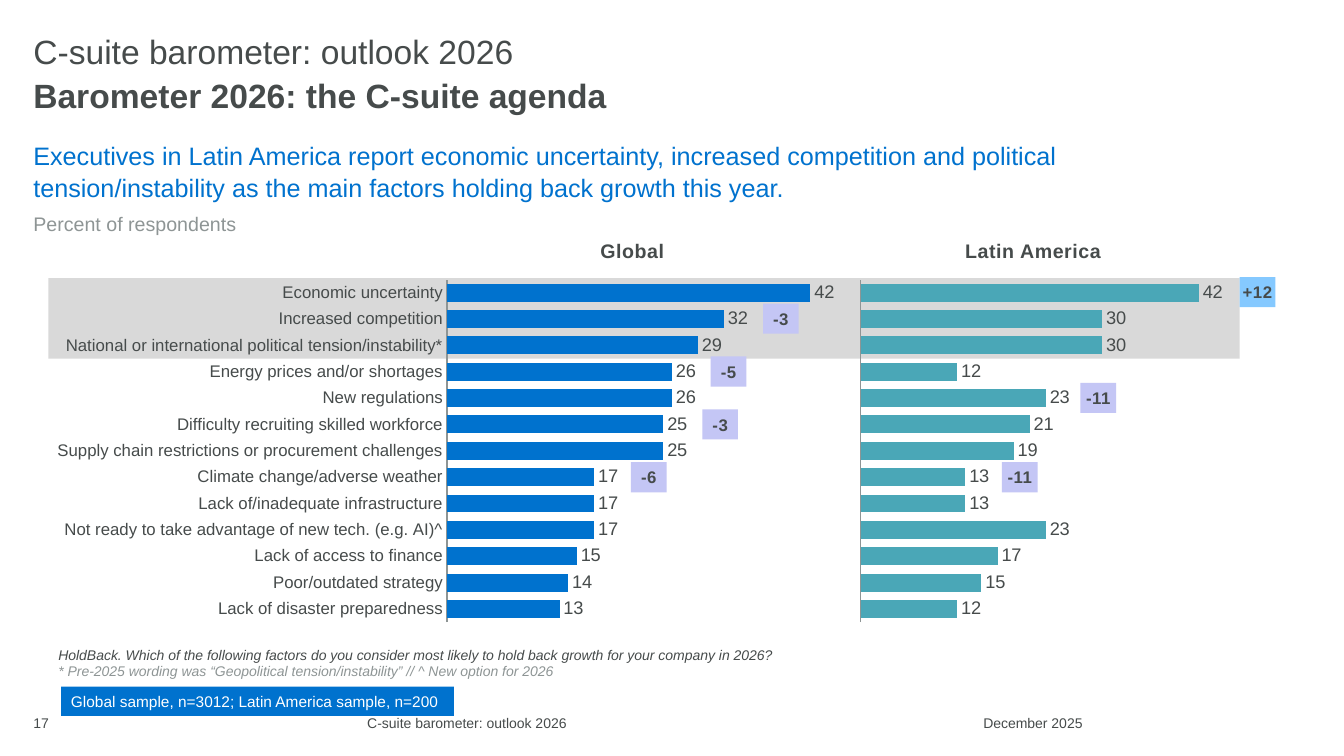
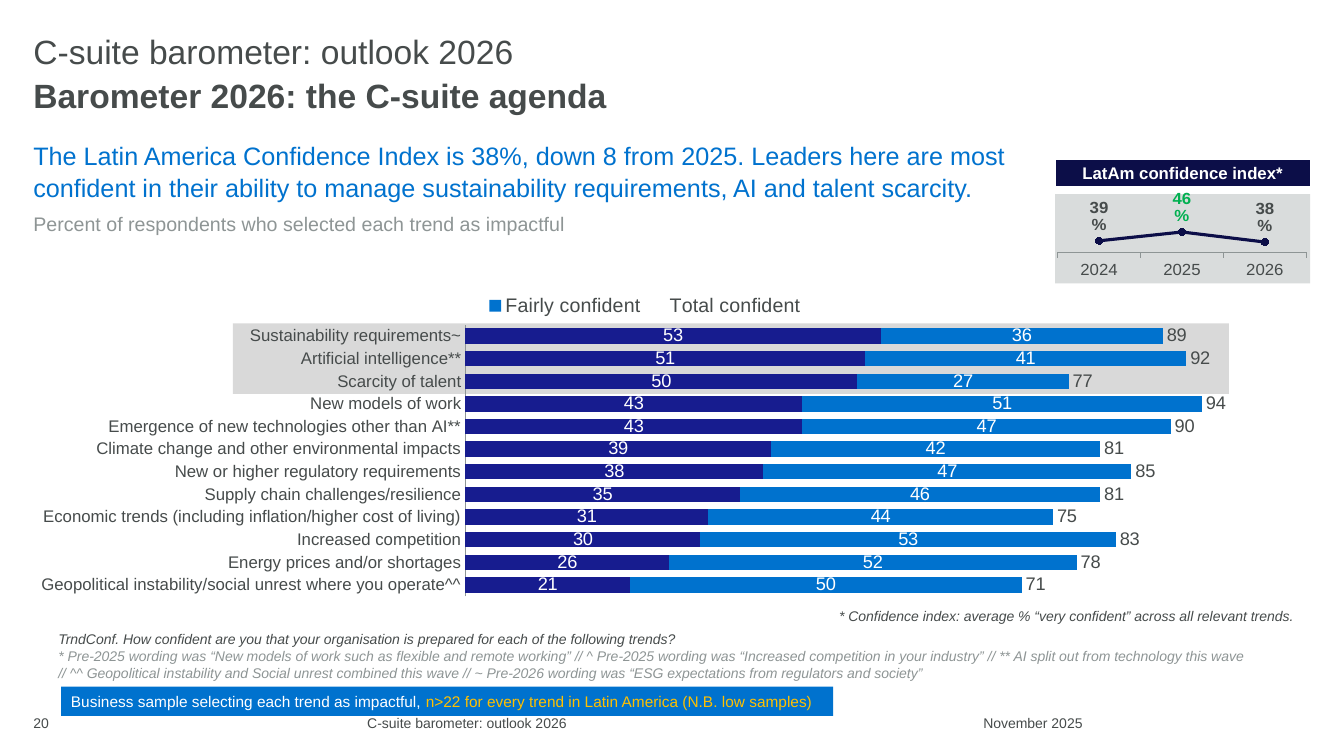
"""Build two survey slides with bar charts, change badges and a confidence index."""
from lxml import etree
from pptx import Presentation
from pptx.chart.data import CategoryChartData
from pptx.dml.color import RGBColor
from pptx.enum import chart as charts, shapes, text
from pptx.oxml import ns
from pptx.util import Cm, Pt

FONT = "Arial"
COLORS = {
    "text": "464B4B", "muted": "8E9595", "blue": "0072CE", "navy": "171C8F",
    "midnight": "0C0E48", "teal": "4AA7B7", "band": "D9D9D9", "panel": "D9DCDC",
    "down": "C4C6F5", "up": "85C9FF", "white": "FFFFFF", "amber": "FFC000", "green": "00B050",
}
TITLE = "C-suite barometer: outlook 2026"
SUBTITLE = "Barometer 2026: the C-suite agenda"
LEFT = 0.84
FOOTER_TOP = 17.83
FOOTER_HEIGHT = 0.76
CHART_TOP = 7.03
CHART_HEIGHT = 8.66
BADGE_WIDTH = 0.9
BADGE_HEIGHT = 0.76
FLAT = (0, 0.13, 0, 0.13)
HEADING = (0, 0.13, 0.25, 0.13)
PADDED = (0.25, 0.13, 0.25, 0.13)
CENTER = text.PP_ALIGN.CENTER
RIGHT = text.PP_ALIGN.RIGHT
MIDDLE = text.MSO_ANCHOR.MIDDLE
TOP = text.MSO_ANCHOR.TOP
LABELS = charts.XL_LABEL_POSITION


def color(name):
    return RGBColor.from_string(COLORS[name])


def add_node(parent, tag, **attributes):
    return etree.SubElement(parent, ns.qn(tag), **attributes)


def shape_properties(fill=None):
    properties = etree.Element(ns.qn("c:spPr"))
    if fill:
        add_node(add_node(properties, "a:solidFill"), "a:srgbClr", val=COLORS[fill])
    else:
        add_node(properties, "a:noFill")
    add_node(add_node(properties, "a:ln"), "a:noFill")
    return properties


class Deck:
    """Hold the shared style and the slide being built."""

    def __init__(self):
        self.presentation = Presentation()
        self.presentation.slide_width = Cm(33.87)
        self.presentation.slide_height = Cm(19.05)
        self.slide = None

    def set_font(self, font, size, name="text", bold=False, italic=False):
        font.name, font.size, font.bold, font.italic = FONT, Pt(size), bold, italic
        font.color.rgb = color(name)

    def set_text(self, frame, lines, size=10, name="text", bold=False, italic=False, align=None,
                 anchor=TOP, margins=PADDED, spacing=None, after=None, tracking=None):
        frame.word_wrap = True
        frame.auto_size = text.MSO_AUTO_SIZE.NONE
        frame.vertical_anchor = anchor
        (frame.margin_left, frame.margin_top,
         frame.margin_right, frame.margin_bottom) = map(Cm, margins)
        for index, line in enumerate(lines):
            content, line_color, line_size = line if isinstance(line, tuple) else (line, name, size)
            paragraph = frame.add_paragraph() if index else frame.paragraphs[0]
            paragraph.alignment = align or text.PP_ALIGN.LEFT
            if spacing:
                paragraph.line_spacing = spacing
            if after:
                paragraph.space_after = Pt(after)
            self.set_font(paragraph.font, line_size, line_color, bold, italic)
            if tracking:
                paragraph._p.pPr.find(ns.qn("a:defRPr")).set("spc", str(tracking))
            if isinstance(content, str):
                paragraph.add_run().text = content
                continue
            for run_text, run_color in content:
                run = paragraph.add_run()
                run.text = run_text
                run.font.color.rgb = color(run_color)

    def add_text(self, at, lines, **style):
        shape = self.slide.shapes.add_textbox(*map(Cm, at))
        self.set_text(shape.text_frame, lines, **style)

    def add_box(self, at, fill, lines=(), **style):
        shape = self.slide.shapes.add_shape(shapes.MSO_SHAPE.RECTANGLE, *map(Cm, at))
        shape.shadow.inherit = False
        shape.fill.solid()
        shape.fill.fore_color.rgb = color(fill)
        shape.line.fill.background()
        if lines:
            self.set_text(shape.text_frame, lines, anchor=MIDDLE, **style)

    def add_slide(self, number, date, message, measure):
        self.slide = self.presentation.slides.add_slide(self.presentation.slide_layouts[5])
        title = self.slide.shapes.title
        title.left, title.top, title.width, title.height = map(Cm, (LEFT, 0.84, 15.7, 1))
        flush = {"margins": (0, 0, 0, 0)}
        self.set_text(title.text_frame, [TITLE], size=24, anchor=MIDDLE, spacing=0.9, **flush)
        self.add_text((LEFT, 1.88, 15.7, 1), [SUBTITLE], size=24, bold=True, anchor=MIDDLE,
                      spacing=1.05, **flush)
        width = 30.56 if number == 17 else 25.55
        self.add_text((LEFT, 3.51, width, 2.51), [(message, "blue", 18), (measure, "muted", 14)],
                      spacing=1.05, after=6, **flush)
        for left, width, words, align in ((LEFT, 2.49, str(number), None),
                                          (3.33, 16.87, TITLE, CENTER),
                                          (23.77, 3.51, date, RIGHT)):
            self.add_text((left, FOOTER_TOP, width, FOOTER_HEIGHT), [words], align=align,
                          anchor=MIDDLE, margins=FLAT)

    def add_notes(self, top, height, question, remarks):
        lines = [question] + [(remark, "muted", 10) for remark in remarks]
        self.add_text((1.22, top, 30.86, height), lines, italic=True)

    def add_sample(self, width, runs):
        self.add_box((1.54, 17.3, width, 0.74), "blue", [runs], size=11, name="white")

    def add_badge(self, left, row, row_height, words):
        top = CHART_TOP + (row + 0.5) * row_height - BADGE_HEIGHT / 2
        fill = "up" if words.startswith("+") else "down"
        self.add_box((left, top, BADGE_WIDTH, BADGE_HEIGHT), fill, [words], size=12, bold=True,
                     align=CENTER, margins=FLAT, tracking=40)

    def add_chart(self, kind, at, categories, series, scale, plot, number_format="General",
                  fill=None):
        data = CategoryChartData(number_format=number_format)
        data.categories = categories
        for name, values in series:
            data.add_series(name, values)
        chart = self.slide.shapes.add_chart(kind, *map(Cm, at), data).chart
        chart.has_title = chart.has_legend = False
        self.set_font(chart.font, 12)
        chart.plots[0].vary_by_categories = False
        value_axis, category_axis = chart.value_axis, chart.category_axis
        value_axis.minimum_scale, value_axis.maximum_scale, value_axis.major_unit = scale
        value_axis.has_major_gridlines = False
        value_axis.visible = False
        category_axis.has_major_gridlines = False
        category_axis.major_tick_mark = charts.XL_TICK_MARK.NONE
        category_axis.minor_tick_mark = charts.XL_TICK_MARK.NONE
        category_axis.format.line.color.rgb = color("muted")
        category_axis.format.line.width = Pt(0.75)
        self.set_font(category_axis.tick_labels.font, 12)
        self.place_plot(chart, plot)
        chart._chartSpace.find(ns.qn("c:chart")).addnext(shape_properties(fill))
        return chart

    def place_plot(self, chart, plot):
        area = chart._chartSpace.find(".//" + ns.qn("c:plotArea"))
        for layout in area.findall(ns.qn("c:layout")):
            area.remove(layout)
        layout = etree.Element(ns.qn("c:layout"))
        manual = add_node(layout, "c:manualLayout")
        settings = [("layoutTarget", "inner"), ("xMode", "edge"), ("yMode", "edge")]
        settings += zip("xywh", map(str, plot))
        for tag, value in settings:
            add_node(manual, "c:" + tag, val=value)
        area.insert(0, layout)
        area.append(shape_properties())

    def label(self, series, size, name, position=None, bold=False, number_format=None):
        labels = series.data_labels
        labels.show_value = True
        self.set_font(labels.font, size, name, bold)
        if position is not None:
            labels.position = position
        if number_format:
            labels.number_format = number_format
            labels.number_format_is_linked = False

    def add_bars(self, at, categories, series, top, plot, stacked=False):
        kinds = charts.XL_CHART_TYPE
        chart = self.add_chart(kinds.BAR_STACKED if stacked else kinds.BAR_CLUSTERED, at,
                               categories, [item[:2] for item in series], (0, top, 5), plot)
        chart.category_axis.reverse_order = True
        chart.plots[0].gap_width = 47
        if stacked:
            chart.plots[0].overlap = 100
        for bars, (_, _, fill, label_color, position) in zip(chart.plots[0].series, series):
            if fill:
                bars.format.fill.solid()
                bars.format.fill.fore_color.rgb = color(fill)
            else:
                bars.format.fill.background()
            self.label(bars, 13, label_color, position)
        return chart

    def add_legend(self, chart, hidden):
        chart.has_legend = True
        legend = chart.legend
        legend.position = charts.XL_LEGEND_POSITION.TOP
        legend.include_in_layout = False
        self.set_font(legend.font, 14)
        entry = etree.Element(ns.qn("c:legendEntry"))
        add_node(entry, "c:idx", val=str(hidden))
        add_node(entry, "c:delete", val="1")
        legend._element.find(ns.qn("c:legendPos")).addnext(entry)

    def add_index(self, heading, years, values):
        table = self.slide.shapes.add_table(1, 1, *map(Cm, (26.59, 4.01, 6.43, 0.69))).table
        table.first_row = table.horz_banding = False
        cell = table.cell(0, 0)
        cell.fill.solid()
        cell.fill.fore_color.rgb = color("midnight")
        cell.vertical_anchor = MIDDLE
        paragraph = cell.text_frame.paragraphs[0]
        paragraph.alignment = CENTER
        self.set_font(paragraph.font, 12, "white", True)
        paragraph.add_run().text = heading
        properties = cell._tc.get_or_add_tcPr()
        for index, (side, width) in enumerate((("L", 1), ("R", 1), ("T", 1), ("B", 3))):
            border = etree.Element(ns.qn("a:ln" + side), w=str(Pt(width)))
            add_node(add_node(border, "a:solidFill"), "a:srgbClr", val=COLORS["white"])
            properties.insert(index, border)
        chart = self.add_chart(charts.XL_CHART_TYPE.LINE_MARKERS, (26.59, 4.8, 6.43, 2.34), years,
                               [("Confidence index", values)], (0.3, 0.65, 0.1),
                               (0.01, 0.159, 0.975, 0.492), "0%", "panel")
        chart.category_axis.major_tick_mark = charts.XL_TICK_MARK.OUTSIDE
        line = chart.plots[0].series[0]
        line.smooth = False
        line.format.line.color.rgb = color("midnight")
        line.format.line.width = Pt(2.25)
        line.marker.style = charts.XL_MARKER_STYLE.CIRCLE
        line.marker.size = 5
        line.marker.format.fill.solid()
        line.marker.format.fill.fore_color.rgb = color("midnight")
        line.marker.format.line.color.rgb = color("midnight")
        self.label(line, 12, "text", LABELS.ABOVE, True, "0%")
        peak = line.points[values.index(max(values))].data_label
        self.set_font(peak.font, 12, "green", True)
        peak.position = LABELS.ABOVE


def build_growth_slide(deck):
    deck.add_slide(17, "December 2025", "Executives in Latin America report economic uncertainty, increased competition and political tension/instability as the main factors holding back growth this year.", "Percent of respondents")
    factors = ["Economic uncertainty", "Increased competition",
               "National or international political tension/instability*",
               "Energy prices and/or shortages", "New regulations",
               "Difficulty recruiting skilled workforce",
               "Supply chain restrictions or procurement challenges",
               "Climate change/adverse weather", "Lack of/inadequate infrastructure",
               "Not ready to take advantage of new tech. (e.g. AI)^", "Lack of access to finance",
               "Poor/outdated strategy", "Lack of disaster preparedness"]
    world = [42, 32, 29, 26, 26, 25, 25, 17, 17, 17, 15, 14, 13]
    region = [42, 30, 30, 12, 23, 21, 19, 13, 13, 23, 17, 15, 12]
    deck.add_box((1.22, 7.01, 30.02, 2.03), "band")
    deck.add_bars((-0.69, CHART_TOP, 22.1, CHART_HEIGHT), factors,
                  [("Global", world, "blue", "text", LABELS.OUTSIDE_END)], 46,
                  (0.541, 0, 0.454, 1))
    chart = deck.add_bars((21.41, CHART_TOP, 11.61, CHART_HEIGHT), factors,
                          [("Latin America", region, "teal", "text", LABELS.OUTSIDE_END)], 54,
                          (0.024, 0, 0.944, 1))
    chart.category_axis.tick_label_position = charts.XL_TICK_LABEL_POSITION.NONE
    for left, width, words in ((14.61, 2.9, "Global"), (24.28, 3.76, "Latin America")):
        deck.add_text((left, 5.89, width, 0.86), [words], size=14, bold=True, align=CENTER,
                      margins=HEADING, tracking=40)
    for left, row, change in ((19.23, 1, "-3"), (17.91, 3, "-5"), (17.7, 5, "-3"),
                              (15.9, 7, "-6"), (27.23, 4, "-11"), (31.24, 0, "+12"),
                              (25.25, 7, "-11")):
        deck.add_badge(left, row, CHART_HEIGHT / len(factors), change)
    deck.add_notes(16.15, 1.12, "HoldBack. Which of the following factors do you consider most likely to hold back growth for your company in 2026?", ["* Pre-2025 wording was “Geopolitical tension/instability” // ^ New option for 2026"])
    deck.add_sample(9.9, "Global sample, n=3012; Latin America sample, n=200")


def build_confidence_slide(deck):
    deck.add_slide(20, "November 2025", "The Latin America Confidence Index is 38%, down 8 from 2025. Leaders here are most confident in their ability to manage sustainability requirements, AI and talent scarcity.", "Percent of respondents who selected each trend as impactful")
    trends = ["Sustainability requirements~", "Artificial intelligence**", "Scarcity of talent",
              "New models of work", "Emergence of new technologies other than AI**",
              "Climate change and other environmental impacts",
              "New or higher regulatory requirements", "Supply chain challenges/resilience",
              "Economic trends (including inflation/higher cost of living)",
              "Increased competition", "Energy prices and/or shortages",
              "Geopolitical instability/social unrest where you operate^^"]
    very = [53, 51, 50, 43, 43, 39, 38, 35, 31, 30, 26, 21]
    fairly = [36, 41, 27, 51, 47, 42, 47, 46, 44, 53, 52, 50]
    total = [sum(pair) for pair in zip(very, fairly)]
    deck.add_box((5.87, 8.15, 25.1, 1.78), "band")
    chart = deck.add_bars((0.43, 7.14, 31.65, 7.9), trends,
                          [("Very confident", very, "navy", "white", None),
                           ("Fairly confident", fairly, "blue", "white", None),
                           ("Total confident", total, None, "text", LABELS.INSIDE_BASE)], 100,
                          (0.357, 0.132, 0.624, 0.868), stacked=True)
    deck.add_legend(chart, hidden=2)
    deck.add_index("LatAm confidence index*", ["2024", "2025", "2026"], [0.39, 0.46, 0.38])
    deck.add_text((17.88, 15.19, 14.96, 0.69), ["* Confidence index: average % “very confident” across all relevant trends."], italic=True, align=RIGHT)
    deck.add_notes(15.77, 1.55, "TrndConf. How confident are you that your organisation is prepared for each of the following trends?", ["* Pre-2025 wording was “New models of work such as flexible and remote working” // ^ Pre-2025 wording was “Increased competition in your industry” // ** AI split out from technology this wave", "// ^^ Geopolitical instability and Social unrest combined this wave // ~ Pre-2026 wording was “ESG expectations from regulators and society”"])
    deck.add_sample(19.46, [("Business sample selecting each trend as impactful, ", "white"),
                            ("n>22 for every trend in Latin America (N.B. low samples)", "amber")])


def main():
    deck = Deck()
    build_growth_slide(deck)
    build_confidence_slide(deck)
    deck.presentation.save("out.pptx")


if __name__ == "__main__":
    main()
